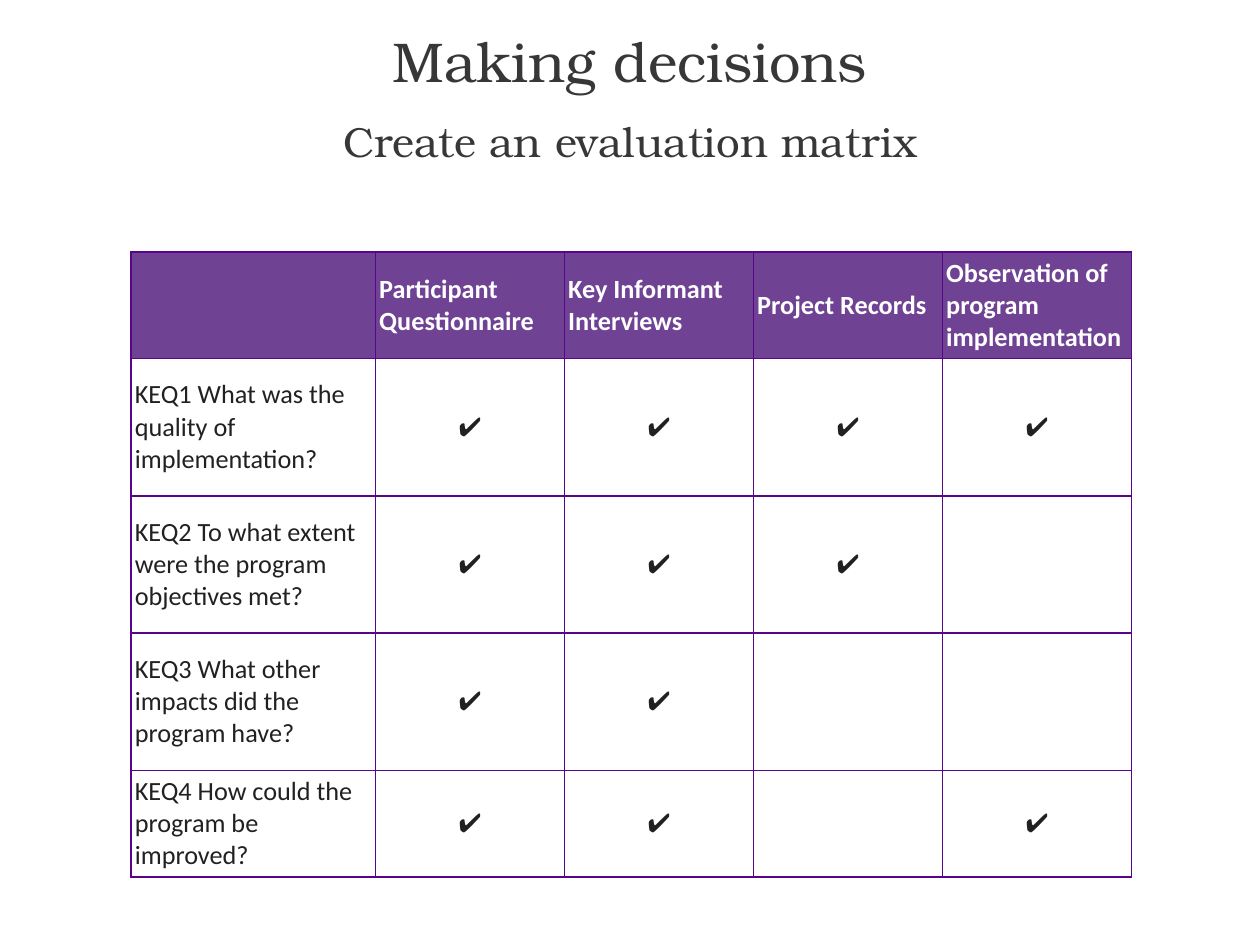
from lxml import etree
from pptx import Presentation
from pptx.dml.color import RGBColor
from pptx.enum.text import MSO_ANCHOR, PP_ALIGN
from pptx.oxml.ns import qn
from pptx.util import Inches, Pt

PURPLE = RGBColor(0x6F, 0x42, 0x93)
BORDER = RGBColor(0x57, 0x06, 0x8C)
WHITE = RGBColor(0xFF, 0xFF, 0xFF)
INK = RGBColor(0x21, 0x21, 0x21)
HEADING = RGBColor(0x37, 0x37, 0x37)

METHODS = ["Participant Questionnaire", "Key Informant Interviews",
           "Project Records", "Observation of program implementation"]
QUESTIONS = [
    ("KEQ1 What was the quality of implementation?", "✔✔✔✔"),
    ("KEQ2 To what extent were the program objectives met?", "✔✔✔ "),
    ("KEQ3 What other impacts did the program have?", "✔✔  "),
    ("KEQ4 How could the program be improved?", "✔✔ ✔"),
]


def style_font(font, name, size, color, bold=False):
    font.name, font.size, font.bold = name, Pt(size), bold
    font.color.rgb = color


def add_borders(cell):
    """Outline all four sides; borders must precede the fill in tcPr."""
    tcPr = cell._tc.get_or_add_tcPr()
    for i, side in enumerate(("a:lnL", "a:lnR", "a:lnT", "a:lnB")):
        ln = etree.Element(qn(side), w=str(Pt(1)))
        fill = etree.SubElement(ln, qn("a:solidFill"))
        etree.SubElement(fill, qn("a:srgbClr"), val=str(BORDER))
        tcPr.insert(i, ln)


prs = Presentation()
prs.slide_width, prs.slide_height = Inches(10), Inches(7.5)
s = prs.slides.add_slide(prs.slide_layouts[6])

# Evaluation matrix
rows = [["", *METHODS]] + [[question, *marks] for question, marks in QUESTIONS]
table = s.shapes.add_table(len(rows), len(rows[0]), Inches(1.04), Inches(2),
                           Inches(7.92), Inches(4.95)).table
for col, width in zip(table.columns, [1.94] + [1.5] * 4):
    col.width = Inches(width)
for row, height in zip(table.rows, [0.84, 1.09, 1.09, 1.09, 0.84]):
    row.height = Inches(height)

for r, row in enumerate(rows):
    for c, text in enumerate(row):
        cell = table.cell(r, c)
        cell.fill.solid()
        cell.fill.fore_color.rgb = WHITE if r else PURPLE
        cell.vertical_anchor = MSO_ANCHOR.MIDDLE
        cell.margin_left = cell.margin_right = Inches(0.03)
        cell.margin_top = cell.margin_bottom = Inches(0.04)
        add_borders(cell)
        p = cell.text_frame.paragraphs[0]
        p.text = text.strip()
        p.alignment = PP_ALIGN.CENTER if r and c else PP_ALIGN.LEFT
        for run in p.runs:
            style_font(run.font, "Calibri", 15, INK if r else WHITE, bold=r == 0)

# Title and subtitle
for text, top, size in [("Making decisions", 0.21, 32),
                        ("Create an evaluation matrix", 0.92, 24)]:
    tf = s.shapes.add_textbox(0, Inches(top), Inches(10), Inches(0.55)).text_frame
    tf.word_wrap = True
    tf.margin_left = tf.margin_right = tf.margin_top = tf.margin_bottom = 0
    p = tf.paragraphs[0]
    p.text = text
    p.alignment = PP_ALIGN.CENTER
    style_font(p.runs[0].font, "TeX Gyre Bonum", size, HEADING)

prs.save("out.pptx")
